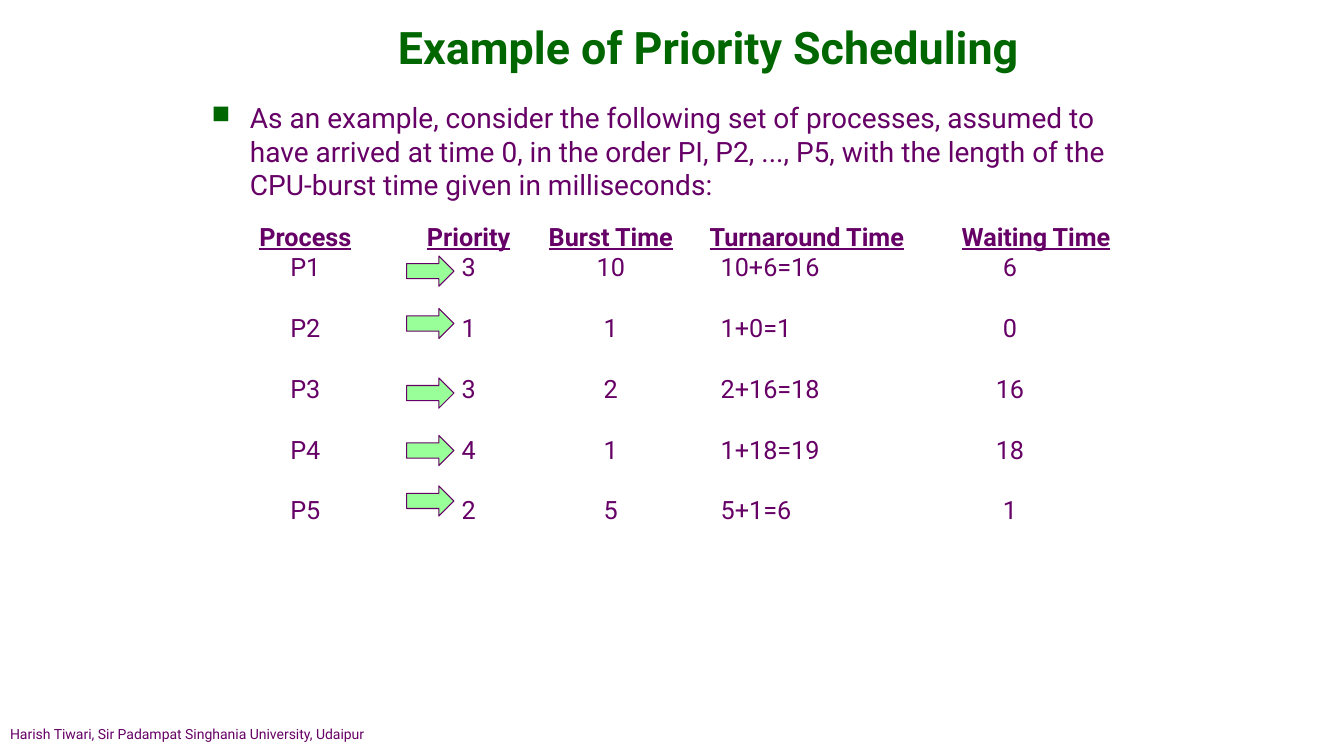
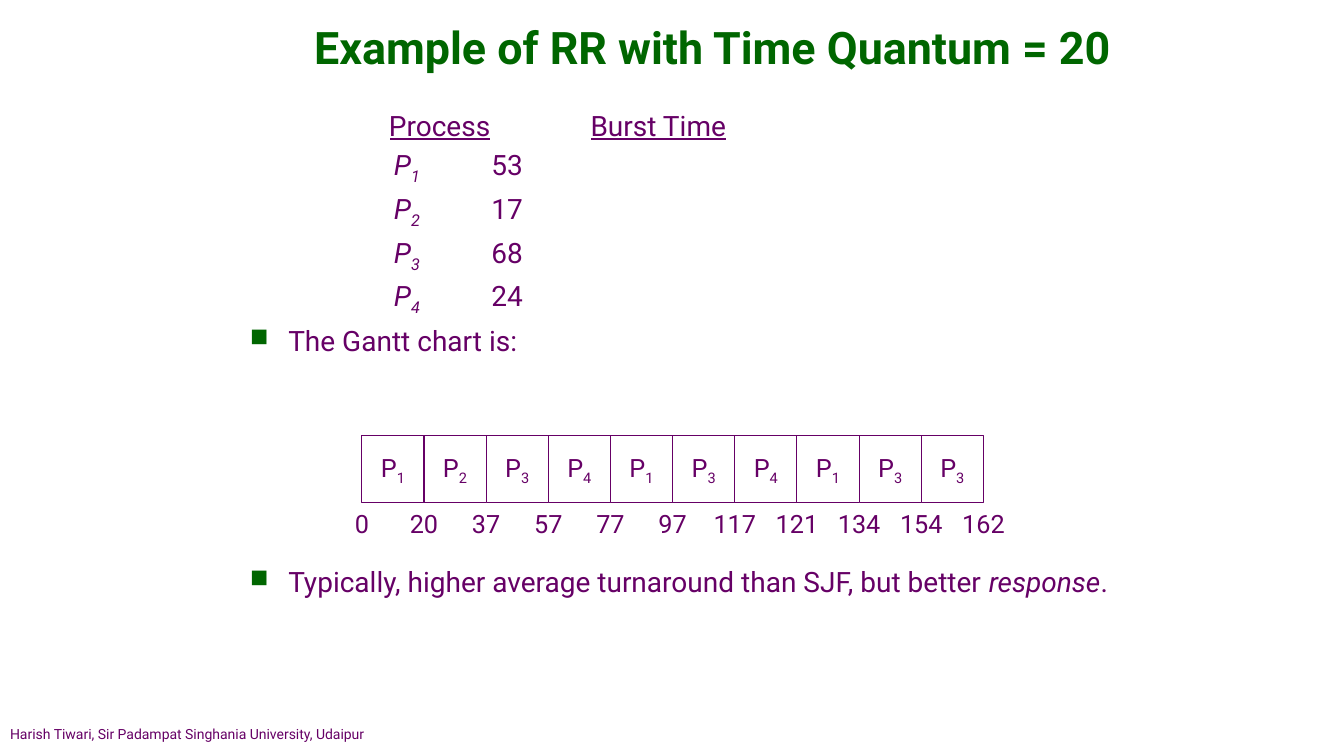
from dataclasses import dataclass

from lxml import etree
from pptx import Presentation
from pptx.dml.color import RGBColor
from pptx.enum.shapes import MSO_SHAPE
from pptx.enum.text import MSO_ANCHOR, PP_ALIGN
from pptx.oxml.ns import qn
from pptx.util import Inches, Pt

LEFT, CENTER = PP_ALIGN.LEFT, PP_ALIGN.CENTER
TOP, MIDDLE = MSO_ANCHOR.TOP, MSO_ANCHOR.MIDDLE
RECTANGLE, RIGHT_ARROW = MSO_SHAPE.RECTANGLE, MSO_SHAPE.RIGHT_ARROW
WIDTH, HEIGHT = Inches(13.33), Inches(7.5)
GRID_COLUMNS, GRID_ROWS = 80, 45


@dataclass(frozen=True)
class Theme:
    font: str = "Roboto"
    text: str = "660066"
    accent: str = "006600"
    arrow: str = "99FF99"
    paper: str = "FFFFFF"
    title_size: int = 32
    body_size: int = 20
    label_size: int = 18
    footer_size: int = 10
    line_width: float = 0.75


@dataclass(frozen=True)
class Column:
    heading: str
    width: float
    align: PP_ALIGN = CENTER
    left_inset: float = 0
    right_inset: float = 0


THEME = Theme()
FOOTER = "Harish Tiwari, Sir Padampat Singhania University, Udaipur"


def across(columns):
    return round(WIDTH * columns / GRID_COLUMNS)


def down(rows):
    return round(HEIGHT * rows / GRID_ROWS)


def place(left, top, width, height):
    return across(left), down(top), across(width), down(height)


def rgb(color):
    return RGBColor.from_string(color)


def add_run(paragraph, text, size, color=THEME.text, bold=False,
            italic=False, underline=False, subscript=False):
    run = paragraph.add_run()
    run.text = text
    font = run.font
    font.name, font.size = THEME.font, Pt(size)
    font.bold, font.italic, font.underline = bold, italic, underline
    font.color.rgb = rgb(color)
    if subscript:
        run._r.get_or_add_rPr().set("baseline", "-25000")


def add_plain_name(paragraph, number, size):
    add_run(paragraph, f"P{number}", size)


def add_subscript_name(paragraph, number, size, italic=False):
    add_run(paragraph, "P", size, italic=italic)
    add_run(paragraph, str(number), size, italic=italic, subscript=True)


def add_italic_name(paragraph, number, size):
    add_subscript_name(paragraph, number, size, italic=True)


def add_box(slide, area, align=LEFT, anchor=TOP, side_inset=0.6):
    frame = slide.shapes.add_textbox(*place(*area)).text_frame
    frame.word_wrap = True
    frame.vertical_anchor = anchor
    frame.margin_left = frame.margin_right = across(side_inset)
    paragraph = frame.paragraphs[0]
    paragraph.alignment = align
    return paragraph


def add_bullet(slide, area, pieces):
    paragraph = add_box(slide, area)
    properties = paragraph._p.get_or_add_pPr()
    indent = Inches(0.38)
    properties.set("marL", str(indent))
    properties.set("indent", str(-indent))
    color = etree.SubElement(properties, qn("a:buClr"))
    etree.SubElement(color, qn("a:srgbClr"), val=THEME.accent)
    etree.SubElement(properties, qn("a:buSzPct"), val="90000")
    etree.SubElement(properties, qn("a:buChar"), char="■")
    for text, italic in pieces:
        add_run(paragraph, text, THEME.body_size, italic=italic)


def add_outlined_shape(slide, kind, area, fill):
    shape = slide.shapes.add_shape(kind, *place(*area))
    shape.shadow.inherit = False
    shape.fill.solid()
    shape.fill.fore_color.rgb = rgb(fill)
    shape.line.color.rgb = rgb(THEME.text)
    shape.line.width = Pt(THEME.line_width)
    return shape


def prepare_cell(cell, align, left_inset=0, right_inset=0):
    cell.fill.background()
    cell.margin_top = cell.margin_bottom = 0
    cell.margin_left, cell.margin_right = across(left_inset), across(right_inset)
    paragraph = cell.text_frame.paragraphs[0]
    paragraph.alignment = align
    return paragraph


def add_process_table(slide, left, top, columns, rows, heading_height,
                      row_height, size, heading_align, bold_headings,
                      write_name):
    total_width = sum(column.width for column in columns)
    total_height = heading_height + row_height * len(rows)
    table = slide.shapes.add_table(
        len(rows) + 1, len(columns),
        *place(left, top, total_width, total_height)).table
    table.first_row = table.horz_banding = False
    table.rows[0].height = down(heading_height)
    for index, column in enumerate(columns):
        table.columns[index].width = across(column.width)
        cell = table.cell(0, index)
        paragraph = prepare_cell(cell, heading_align)
        if column.heading:
            add_run(paragraph, column.heading, size,
                    bold=bold_headings, underline=True)
        else:
            table.cell(0, index - 1).merge(cell)
    for number, values in enumerate(rows, start=1):
        table.rows[number].height = down(row_height)
        paragraphs = [
            prepare_cell(table.cell(number, index), column.align,
                         column.left_inset, column.right_inset)
            for index, column in enumerate(columns)]
        write_name(paragraphs[0], number, size)
        for paragraph, value in zip(paragraphs[1:], values):
            add_run(paragraph, value, size)


def add_gantt(slide, left, top, cell_width, cell_height, processes, times):
    for index, process in enumerate(processes):
        area = left + index * cell_width, top, cell_width, cell_height
        frame = add_outlined_shape(slide, RECTANGLE, area, THEME.paper).text_frame
        frame.word_wrap = False
        frame.vertical_anchor = MIDDLE
        paragraph = frame.paragraphs[0]
        paragraph.alignment = CENTER
        add_subscript_name(paragraph, process, THEME.label_size)
    for index, time in enumerate(times):
        area = (left + (index - 0.5) * cell_width, top + cell_height,
                cell_width, 2.4)
        paragraph = add_box(slide, area, CENTER, MIDDLE, side_inset=0)
        add_run(paragraph, str(time), THEME.label_size)


def add_base_slide(presentation, title, title_left, title_width):
    slide = presentation.slides.add_slide(presentation.slide_layouts[6])
    slide.background.fill.solid()
    slide.background.fill.fore_color.rgb = rgb(THEME.paper)
    heading = add_box(slide, (title_left, 0, title_width, 5.52), CENTER, MIDDLE)
    add_run(heading, title, THEME.title_size, THEME.accent, bold=True)
    footer = add_box(slide, (0, 42.9, 25.32, 2.1))
    add_run(footer, FOOTER, THEME.footer_size)
    return slide


def build_priority_slide(presentation):
    slide = add_base_slide(
        presentation, "Example of Priority Scheduling", 10.26, 63.84)
    add_bullet(slide, (12, 5.7, 56.16, 6.18), [(
        "As an example, consider the following set of processes, assumed to "
        "have arrived at time 0, in the order PI, P2, ..., P5, with the length "
        "of the CPU-burst time given in milliseconds:", False)])
    columns = [
        Column("Process", 11.88),
        Column("Priority", 7.56),
        Column("Burst Time", 9.36),
        Column("Turnaround Time", 13.98, LEFT, left_inset=1.86),
        Column("Waiting Time", 13.32, right_inset=3.12),
    ]
    rows = [
        ("3", "10", "10+6=16", "6"),
        ("1", "1", "1+0=1", "0"),
        ("3", "2", "2+16=18", "16"),
        ("4", "1", "1+18=19", "18"),
        ("2", "5", "5+1=6", "1"),
    ]
    add_process_table(slide, 12.24, 13.28, columns, rows, 1.8, 3.62,
                      THEME.label_size, CENTER, True, add_plain_name)
    for arrow_top in (15.24, 18.36, 22.5, 25.92, 28.92):
        add_outlined_shape(
            slide, RIGHT_ARROW, (24.2, arrow_top, 2.82, 1.8), THEME.arrow)


def build_round_robin_slide(presentation):
    slide = add_base_slide(
        presentation, "Example of RR with Time Quantum = 20", 16, 52.86)
    columns = [
        Column("Process", 6, LEFT, left_inset=0.3),
        Column("", 6, LEFT, left_inset=0.1),
        Column("Burst Time", 9, LEFT),
    ]
    rows = [("53",), ("17",), ("68",), ("24",)]
    add_process_table(slide, 23.15, 6.55, columns, rows, 2.36, 2.6,
                      THEME.body_size, LEFT, False, add_italic_name)
    add_bullet(slide, (14.28, 18.95, 53.46, 2.6),
               [("The Gantt chart is:", False)])
    add_gantt(slide, 21.54, 25.92, 3.7, 4.02,
              (1, 2, 3, 4, 1, 3, 4, 1, 3, 3),
              (0, 20, 37, 57, 77, 97, 117, 121, 134, 154, 162))
    add_bullet(slide, (14.28, 33.3, 53.46, 2.6), [
        ("Typically, higher average turnaround than SJF, but better ", False),
        ("response", True),
        (".", False)])


def main():
    presentation = Presentation()
    presentation.slide_width, presentation.slide_height = WIDTH, HEIGHT
    build_priority_slide(presentation)
    build_round_robin_slide(presentation)
    presentation.save("out.pptx")


if __name__ == "__main__":
    main()
